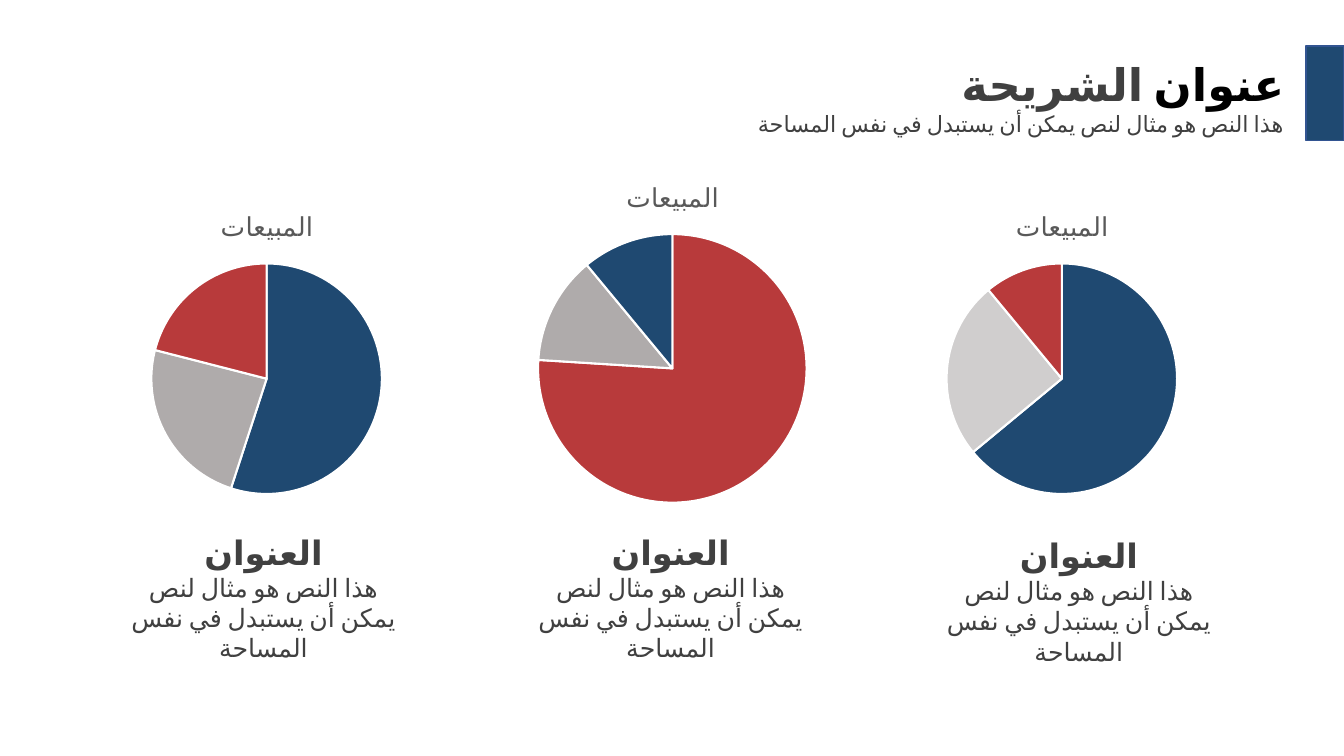
from dataclasses import dataclass

from lxml.etree import SubElement
from pptx import Presentation
from pptx.chart.data import CategoryChartData
from pptx.dml.color import RGBColor
from pptx.enum.chart import XL_CHART_TYPE as ChartType
from pptx.enum.lang import MSO_LANGUAGE_ID as Language
from pptx.enum.shapes import MSO_SHAPE as Shape
from pptx.enum.text import MSO_ANCHOR as Anchor, MSO_AUTO_SIZE as AutoSize, PP_ALIGN as Align
from pptx.oxml import parse_xml
from pptx.oxml.ns import nsdecls, qn
from pptx.util import Cm, Pt


@dataclass(frozen=True)
class Theme:
    font: str = "Calibri"
    black: str = "000000"
    text: str = "404040"
    chart_text: str = "595959"
    white: str = "FFFFFF"
    blue: str = "1F4971"
    bar_line: str = "325491"
    red: str = "B83A3B"
    gray: str = "AFABAB"
    light_gray: str = "D0CECE"
    title_size: float = 32
    subtitle_size: float = 16
    heading_size: float = 24
    body_size: float = 18
    chart_title_size: float = 18.6
    chart_size: float = 10


THEME = Theme()
SAMPLE = "هذا النص هو مثال لنص يمكن أن يستبدل في نفس المساحة"
SALES = "المبيعات"

# Pies: left, top, width, height in cm, then (value, colour) per slice
PIES = [
    (20.83, 4.93, 11.86, 7.9, [(64, THEME.blue), (25, THEME.light_gray), (11, THEME.red)]),
    (10.29, 4.19, 13.31, 8.86, [(76, THEME.red), (13, THEME.gray), (11, THEME.blue)]),
    (0.79, 4.93, 11.86, 7.9, [(55, THEME.blue), (24, THEME.gray), (21, THEME.red)]),
]
# Space above and below each pie inside its chart, in cm
PIE_ABOVE, PIE_BELOW = 1.71, 0.38
# Captions: left, top in cm
CAPTIONS = [(2.97, 13.28), (13.23, 13.28), (23.52, 13.36)]


def rgb(value):
    return RGBColor.from_string(value)


def add_text(p, text, *, size, color=THEME.text, bold=False, align=None,
             complex_font=True, outline=None):
    """Append a formatted run to a paragraph."""
    r = p.add_run()
    r.text = text
    r.font.size, r.font.bold, r.font.name = Pt(size), bold, THEME.font
    r.font.color.rgb = rgb(color)
    r.font.language_id = Language.ARABIC_EGYPT
    rPr = r.font._element
    if complex_font:
        SubElement(rPr, qn("a:cs"), typeface=THEME.font)
    if outline:
        rPr.insert(0, parse_xml(
            f'<a:ln {nsdecls("a")} w="{Pt(0.75)}"><a:solidFill>'
            f'<a:srgbClr val="{outline}"/></a:solidFill></a:ln>'))
    if align is not None:
        p.alignment = align
        p._p.get_or_add_pPr().set("rtl", "1")


def add_title(slide):
    sp = slide.shapes.title
    sp.left, sp.top, sp.width, sp.height = Cm(16.36), Cm(1.3), Cm(16.26), Cm(2.39)
    tf = sp.text_frame
    tf.word_wrap, tf.auto_size, tf.vertical_anchor = True, AutoSize.NONE, Anchor.TOP
    p = tf.paragraphs[0]
    add_text(p, "عنوان", size=THEME.title_size, color=THEME.black, bold=True,
             align=Align.RIGHT, outline=THEME.black)
    add_text(p, " الشريحة", size=THEME.title_size, bold=True)
    add_text(tf.add_paragraph(), SAMPLE, size=THEME.subtitle_size, align=Align.RIGHT)


def add_accent_bar(slide):
    sp = slide.shapes.add_shape(Shape.RECTANGLE, Cm(32.91), Cm(1.16), Cm(0.96), Cm(2.39))
    sp.shadow.inherit = False
    sp.fill.solid()
    sp.fill.fore_color.rgb = rgb(THEME.blue)
    sp.line.color.rgb = rgb(THEME.bar_line)
    sp.line.width = Pt(1)


def add_caption(slide, left, top):
    tf = slide.shapes.add_textbox(Cm(left), Cm(top), Cm(7.34), Cm(3.58)).text_frame
    tf.word_wrap, tf.auto_size = True, AutoSize.SHAPE_TO_FIT_TEXT
    add_text(tf.paragraphs[0], "العنوان", size=THEME.heading_size, bold=True, align=Align.CENTER)
    add_text(tf.add_paragraph(), SAMPLE, size=THEME.body_size, align=Align.CENTER)


def place_pie(chart, width, height):
    """Centre the pie under the chart title."""
    diameter = height - PIE_ABOVE - PIE_BELOW
    box = {"x": (width - diameter) / 2 / width, "y": PIE_ABOVE / height,
           "w": diameter / width, "h": diameter / height}
    area = chart._chartSpace.chart.plotArea
    for old in area.findall(qn("c:layout")):
        area.remove(old)
    sides = "".join(f'<c:{side} val="{value:.4f}"/>' for side, value in box.items())
    area.insert(0, parse_xml(
        f'<c:layout {nsdecls("c")}><c:manualLayout><c:layoutTarget val="inner"/>'
        f'<c:xMode val="edge"/><c:yMode val="edge"/>{sides}</c:manualLayout></c:layout>'))


def add_pie(slide, left, top, width, height, slices):
    data = CategoryChartData()
    data.categories = [str(i) for i in range(1, len(slices) + 1)]
    data.add_series(SALES, [value for value, _ in slices])
    chart = slide.shapes.add_chart(
        ChartType.PIE, Cm(left), Cm(top), Cm(width), Cm(height), data).chart
    chart.font.name, chart.font.size = THEME.font, Pt(THEME.chart_size)
    chart.font.color.rgb = rgb(THEME.black)
    chart.has_legend = False
    chart.has_title = True
    chart.chart_title.include_in_layout = False
    add_text(chart.chart_title.text_frame.paragraphs[0], SALES, complex_font=False,
             size=THEME.chart_title_size, color=THEME.chart_text)
    place_pie(chart, width, height)
    plot = chart.plots[0]
    plot.vary_by_categories = True
    for i, (_, color) in enumerate(slices):
        fmt = plot.series[0].points[i].format
        fmt.fill.solid()
        fmt.fill.fore_color.rgb = rgb(color)
        fmt.line.color.rgb = rgb(THEME.white)
        fmt.line.width = Pt(1.5)


def main():
    prs = Presentation()
    prs.slide_width, prs.slide_height = Cm(33.87), Cm(19.05)
    slide = prs.slides.add_slide(prs.slide_layouts.get_by_name("Title Only"))

    # Captions and charts
    for caption in CAPTIONS:
        add_caption(slide, *caption)
    for pie in PIES:
        add_pie(slide, *pie)

    # Header
    add_accent_bar(slide)
    add_title(slide)
    prs.save("out.pptx")


if __name__ == "__main__":
    main()
